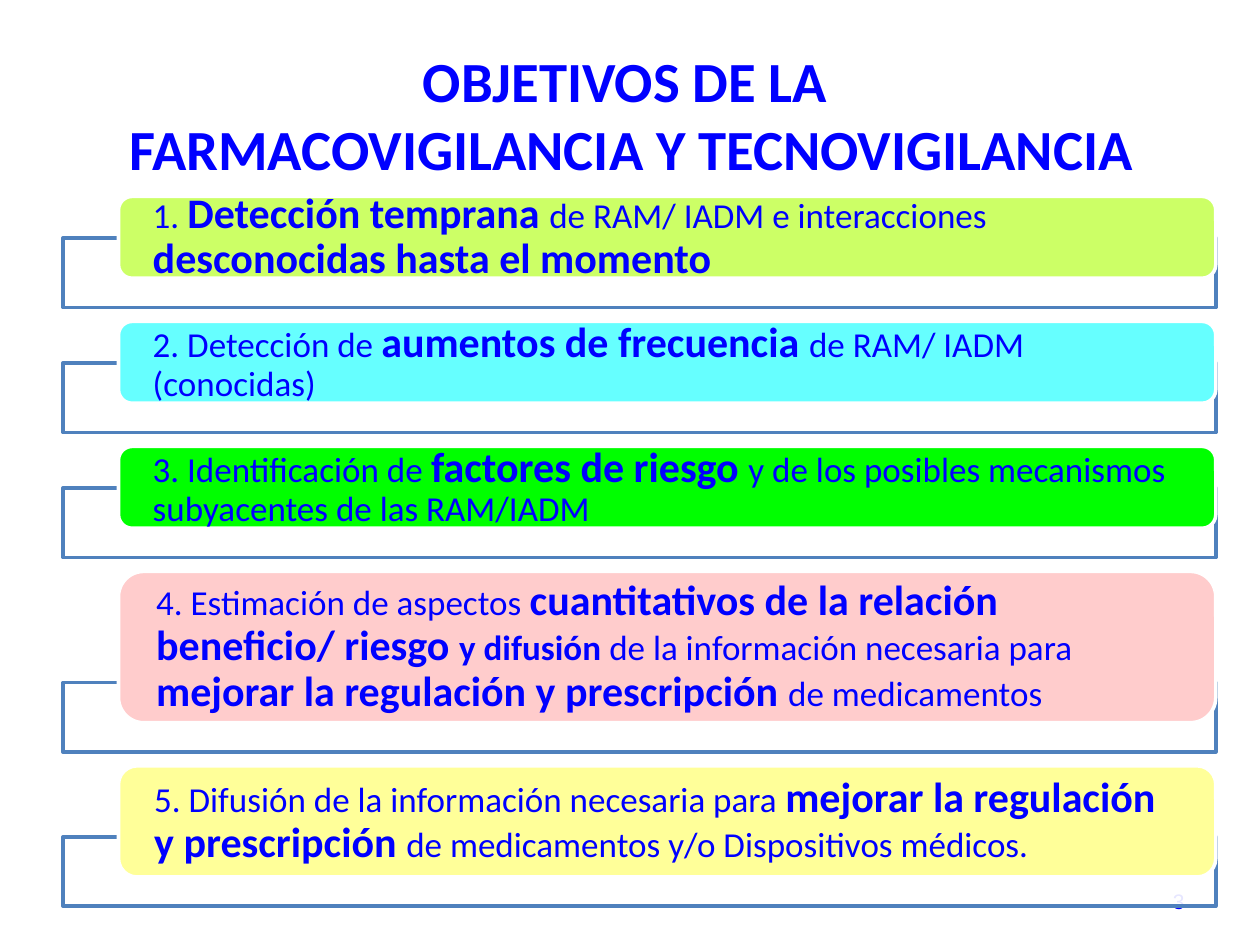
from lxml.etree import SubElement
from pptx import Presentation
from pptx.dml.color import RGBColor
from pptx.enum.shapes import MSO_SHAPE
from pptx.enum.text import MSO_ANCHOR, MSO_AUTO_SIZE, PP_ALIGN
from pptx.oxml.ns import qn
from pptx.util import Cm, Pt

COLORS = {
    "text": "0000FF", "frame": "4F81BD", "white": "FFFFFF",
    "lime": "CCFF66", "cyan": "66FFFF", "green": "00FF00",
    "pink": "FFCCCC", "yellow": "FFFF99",
}
CARD_INDENT = 1.12
FRAME_HEIGHT = 1.4
OVERLAP = 0.81
GAP = 0.28

OBJECTIVES = [
    ("lime", 1.65, [
        ("1. ", 20, False), ("Detección temprana ", 24, True),
        ("de RAM/ IADM e interacciones ", 20, False),
        ("desconocidas hasta el momento", 24, True)]),
    ("cyan", 1.65, [
        ("2. Detección de ", 20, False), ("aumentos de frecuencia ", 24, True),
        ("de RAM/ IADM (conocidas)", 20, False)]),
    ("green", 1.65, [
        ("3. Identificación de ", 20, False), ("factores de riesgo ", 24, True),
        ("y de los posibles mecanismos subyacentes de las RAM/IADM", 20, False)]),
    ("pink", 3.05, [
        ("4. Estimación de aspectos ", 20, False),
        ("cuantitativos de la relación beneficio/ riesgo ", 24, True),
        ("y difusión ", 20, True), ("de la información necesaria para ", 20, False),
        ("mejorar la regulación y prescripción ", 24, True),
        ("de medicamentos", 20, False)]),
    ("yellow", 2.24, [
        ("5. Difusión de la información necesaria para ", 20, False),
        ("mejorar la regulación y prescripción ", 24, True),
        ("de medicamentos y/o Dispositivos médicos.", 20, False)]),
]


def rgb(name):
    return RGBColor.from_string(COLORS[name])


def format_paragraph(p, align, font="Calibri", size=None, bold=None):
    p.alignment = align
    p.font.name = font
    p.font.color.rgb = rgb("text")
    if size:
        p.font.size = Pt(size)
    p.font.bold = bold


def add_title(slide, left, top, width, height):
    sp = slide.shapes.title
    sp.left, sp.top, sp.width, sp.height = map(Cm, (left, top, width, height))
    tf = sp.text_frame
    tf.text = "OBJETIVOS DE LA \vFARMACOVIGILANCIA Y TECNOVIGILANCIA"
    tf.auto_size = MSO_AUTO_SIZE.NONE
    tf.vertical_anchor = MSO_ANCHOR.MIDDLE
    format_paragraph(tf.paragraphs[0], PP_ALIGN.CENTER, size=32.4, bold=True)


def add_page_number(slide, left, top, width, height):
    tf = slide.shapes.add_textbox(*map(Cm, (left, top, width, height))).text_frame
    tf.word_wrap = True
    tf.vertical_anchor = MSO_ANCHOR.MIDDLE
    tf.text = "3"
    format_paragraph(tf.paragraphs[0], PP_ALIGN.RIGHT, font="Arial", size=12)


def add_panel(slide, kind, box, fill, line):
    sp = slide.shapes.add_shape(kind, *map(Cm, box))
    sp.shadow.inherit = False
    sp.fill.solid()
    sp.fill.fore_color.rgb = rgb(fill)
    sp.line.color.rgb = rgb(line)
    sp.line.width = Pt(2)
    return sp


def add_objective(slide, left, top, width, height, fill, runs):
    frame_top = top + height - OVERLAP
    frame = add_panel(slide, MSO_SHAPE.RECTANGLE,
                      (left, frame_top, width, FRAME_HEIGHT), "white", "frame")
    color = frame.fill._xPr.find(qn("a:solidFill"))[0]
    SubElement(color, qn("a:alpha"), val="90000")

    card = add_panel(slide, MSO_SHAPE.ROUNDED_RECTANGLE,
                     (left + CARD_INDENT, top, width - CARD_INDENT, height), fill, "white")
    tf = card.text_frame
    tf.word_wrap = True
    tf.vertical_anchor = MSO_ANCHOR.MIDDLE
    tf.margin_left = tf.margin_right = Cm(0.61)
    tf.margin_top = tf.margin_bottom = 0
    p = tf.paragraphs[0]
    format_paragraph(p, PP_ALIGN.LEFT)
    p.line_spacing = 0.9
    for text, size, bold in runs:
        r = p.add_run()
        r.text = text
        r.font.size = Pt(size)
        r.font.bold = bold


def add_objectives(slide, left, top, width):
    for fill, height, runs in OBJECTIVES:
        add_objective(slide, left, top, width, height, fill, runs)
        top += height - OVERLAP + FRAME_HEIGHT + GAP


def main():
    prs = Presentation()
    prs.slide_width, prs.slide_height = Cm(25.4), Cm(19.05)
    slide = prs.slides.add_slide(prs.slide_layouts[5])
    add_title(slide, 1.3, 0.71, 22.86, 3.18)
    add_page_number(slide, 18.2, 17.66, 5.93, 1.01)
    add_objectives(slide, 1.27, 3.96, 23.24)
    prs.save("out.pptx")


if __name__ == "__main__":
    main()
